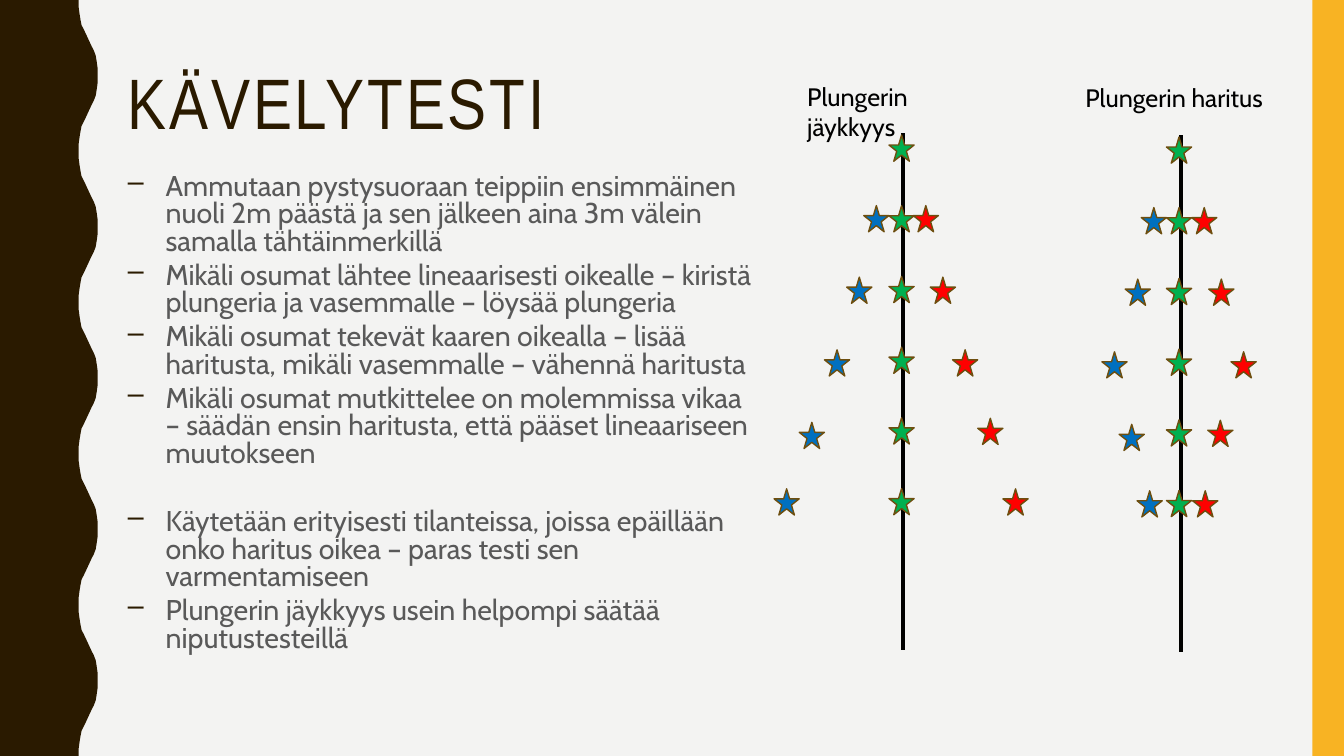
"""Build the walk-back test slide with its two star diagrams."""
from lxml import etree
from pptx import Presentation
from pptx.dml.color import RGBColor
from pptx.enum.shapes import MSO_CONNECTOR, MSO_SHAPE
from pptx.enum.text import MSO_ANCHOR
from pptx.oxml.ns import qn
from pptx.util import Pt

STAR, RECT = MSO_SHAPE.STAR_5_POINT, MSO_SHAPE.RECTANGLE
STRAIGHT = MSO_CONNECTOR.STRAIGHT
TOP, MIDDLE = MSO_ANCHOR.TOP, MSO_ANCHOR.MIDDLE

HEX = {
    "back": "F3F3F2", "brown": "2A1A00", "gold": "F8B323", "edge": "6D4E0F",
    "green": "00B050", "blue": "0070C0", "red": "FF0000",
    "gray": "595959", "black": "000000",
}
WIDE, HIGH = 960, 540
TITLE = "KÄVELYTESTI"
POINTS = [
    ("Ammutaan pystysuoraan teippiin ensimmäinen nuoli 2m päästä ja sen "
     "jälkeen aina 3m välein samalla tähtäinmerkillä", 5.6),
    ("Mikäli osumat lähtee lineaarisesti oikealle – kiristä plungeria ja "
     "vasemmalle – löysää plungeria", 4.8),
    ("Mikäli osumat tekevät kaaren oikealla – lisää haritusta, mikäli "
     "vasemmalle – vähennä haritusta", 4.8),
    ("Mikäli osumat mutkittelee on molemmissa vikaa – säädän ensin haritusta, "
     "että pääset lineaariseen muutokseen", 4.8),
    ("Käytetään erityisesti tilanteissa, joissa epäillään onko haritus oikea "
     "– paras testi sen varmentamiseen", 29.3),
    ("Plungerin jäykkyys usein helpompi säätää niputustesteillä", 4.8),
]
STEP = 50.5
ROWS = [50.4, 101.5, 153.4, 202.3, 252.7]
LOW = [50.4, 101.5, 153.4, 205.2, 252.7]
CHARTS = [
    {"label": "Plungerin jäykkyys", "left": 569.5, "top": 54.7,
     "line": 645.1, "star": 635, "first": 96.5,
     "blue": [-18, -30.2, -46.1, -64.1, -82.1],
     "red": [17.3, 29.5, 45.4, 63.4, 81.4]},
    {"label": "Plungerin haritus", "left": 768.2, "top": 55.4,
     "line": 843.8, "star": 833.2, "first": 97.9,
     "blue": [-18, -29.5, -46.1, -33.8, -21],
     "red": [18, 30.2, 46.1, 29.5, 18.7]},
]
WAVE = [(56.2, 0), (56.2, 5), (56.9, 10.1), (57.6, 14.4), (58.3, 18),
        (59.8, 20.9), (61.2, 23.8), (65.5, 33.1), (67, 36), (68.4, 39.6),
        (69.1, 43.9), (69.8, 49), (69.8, 54)]
TURN = 108


def tint(name):
    return RGBColor.from_string(HEX[name])


def paint(shape, fill, edge=None):
    shape.shadow.inherit = False
    shape.fill.solid()
    shape.fill.fore_color.rgb = tint(fill)
    if edge:
        shape.line.color.rgb = tint(edge)
        shape.line.width = Pt(1)
    else:
        shape.line.fill.background()


def write(shapes, text, box, size, font, color, anchor=TOP, space=None,
          track=None, dash=False):
    """Add a text box; text is a string or a list of (string, gap) pairs."""
    frame = shapes.add_textbox(*map(Pt, box)).text_frame
    frame.word_wrap = True
    frame.vertical_anchor = anchor
    items = [(text, 0)] if isinstance(text, str) else text
    for i, (words, gap) in enumerate(items):
        para = frame.add_paragraph() if i else frame.paragraphs[0]
        para.space_before = Pt(gap)
        if space:
            para.line_spacing = space
        run = para.add_run()
        run.text = words
        run.font.size = Pt(size)
        run.font.name = font
        run.font.color.rgb = tint(color)
        if track:
            run.font._element.set("spc", str(track * 100))
        if dash:
            props = para._p.get_or_add_pPr()
            props.set("marL", str(Pt(27)))
            props.set("indent", str(-Pt(27)))
            ink = etree.SubElement(props, qn("a:buClr"))
            etree.SubElement(ink, qn("a:srgbClr"), val=HEX["brown"])
            etree.SubElement(props, qn("a:buChar"), char="–")


def draw_wave(shapes):
    bend = WAVE + [(x, TURN - y) for x, y in WAVE[-2::-1]]
    edge = [(x, y + n * TURN) for n in range(HIGH // TURN) for x, y in bend]
    form = shapes.build_freeform(0, 0)
    form.add_line_segments([(Pt(x), Pt(y)) for x, y in edge + [(0, HIGH)]])
    paint(form.convert_to_shape(), "brown")


def draw_chart(shapes, chart):
    group = shapes.add_group_shape().shapes
    x, y = chart["line"], chart["first"] - 1.4
    line = group.add_connector(STRAIGHT, Pt(x), Pt(y), Pt(x), Pt(y + 369.4))
    line.line.color.rgb = tint("black")
    line.line.width = Pt(3)
    etree.SubElement(line._element.spPr, qn("a:effectLst"))
    spots = {
        "green": [(0, STEP * i) for i in range(6)],
        "blue": zip(chart["blue"], LOW),
        "red": zip(chart["red"], ROWS),
    }
    for color, pairs in spots.items():
        for dx, dy in pairs:
            star = group.add_shape(STAR, Pt(chart["star"] + dx),
                                   Pt(chart["first"] + dy), Pt(18), Pt(18.7))
            paint(star, color, "edge")


def main():
    deck = Presentation()
    deck.slide_width, deck.slide_height = Pt(WIDE), Pt(HIGH)
    slide = deck.slides.add_slide(deck.slide_layouts[6])
    slide.background.fill.solid()
    slide.background.fill.fore_color.rgb = tint("back")
    shapes = slide.shapes
    draw_wave(shapes)
    paint(shapes.add_shape(RECT, Pt(937.5), 0, Pt(22.5), Pt(HIGH)), "gold")
    write(shapes, TITLE, (84.2, 31, 396, 90), 51, "Arial Narrow", "brown",
          anchor=MIDDLE, space=0.9, track=2)
    write(shapes, POINTS, (84.2, 121, 462.2, 356.4), 20.4, "Cabin", "gray",
          space=0.8, dash=True)
    for chart in CHARTS:
        draw_chart(shapes, chart)
    for chart in CHARTS:
        write(shapes, chart["label"], (chart["left"], chart["top"], 147.6, 28.8),
              18, "Cabin", "black")
    deck.save("out.pptx")


if __name__ == "__main__":
    main()
